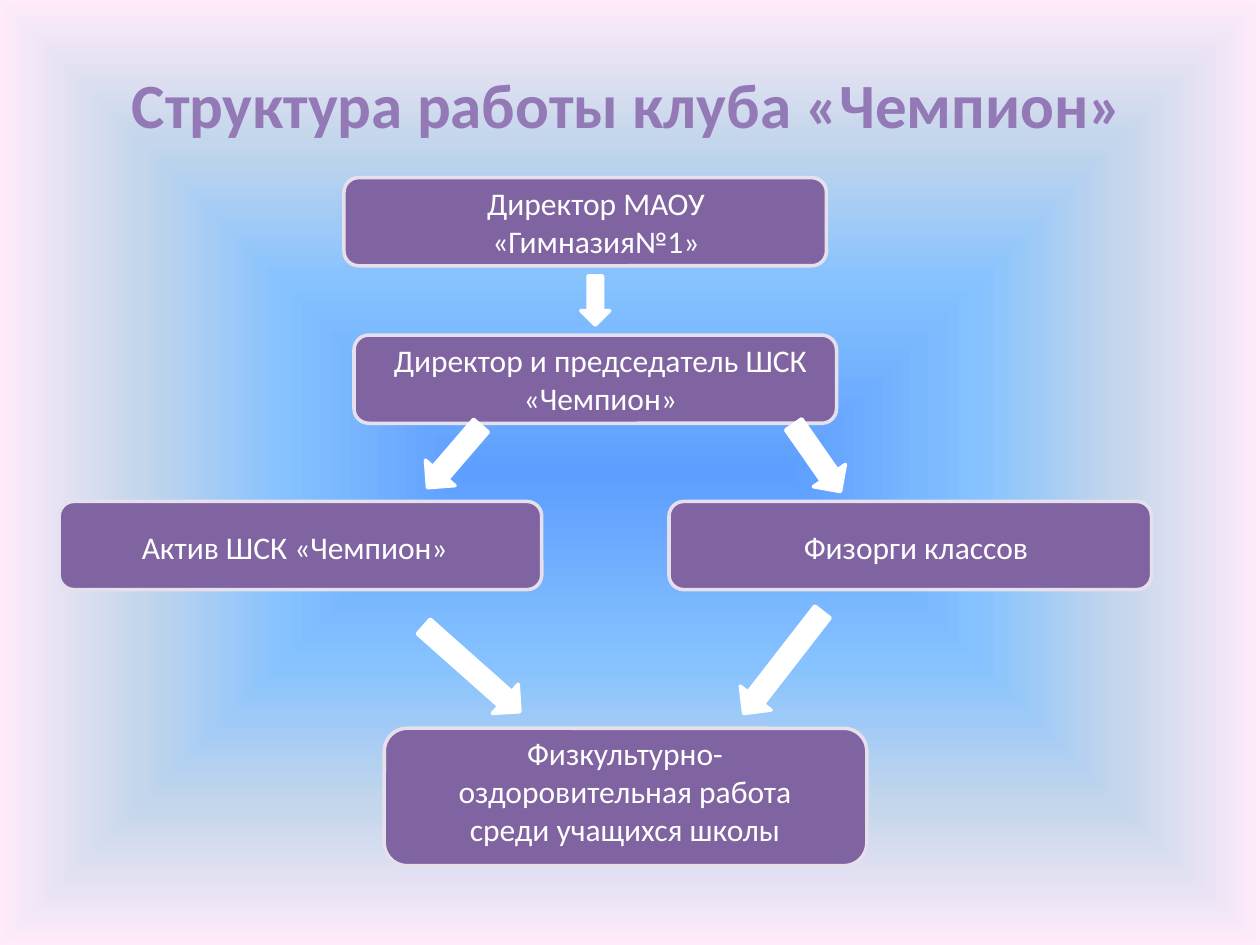
from pptx import Presentation
from pptx.dml.color import RGBColor
from pptx.enum.shapes import MSO_SHAPE
from pptx.enum.text import MSO_ANCHOR, PP_ALIGN
from pptx.oxml import parse_xml
from pptx.oxml.ns import nsdecls
from pptx.util import Inches, Pt

WHITE = RGBColor(0xFF, 0xFF, 0xFF)
PURPLE = RGBColor(0x80, 0x64, 0xA2)
LILAC = RGBColor(0xE6, 0xE0, 0xEC)
TITLE = RGBColor(0x93, 0x79, 0xB5)
BACKGROUND = [
    (0, RGBColor(0x5E, 0x9E, 0xFF)),
    (40, RGBColor(0x85, 0xC2, 0xFF)),
    (70, RGBColor(0xC4, 0xD6, 0xEB)),
    (100, RGBColor(0xFF, 0xEB, 0xFA)),
]
BOX_W = 3.83
BOXES = [
    (2.73, 1.41, 0.7),
    (3.05, 5.78, 1.09),
    (2.81, 2.66, 0.7),
    (0.47, 3.98, 0.7),
    (5.31, 3.98, 0.7),
]
LABELS = [
    ("Директор МАОУ «Гимназия№1»", 2.97, 1.41, 3.52, 0.71),
    ("Директор и председатель ШСК «Чемпион»", 2.97, 2.66, 3.59, 0.71),
    ("Актив ШСК «Чемпион»", 0.62, 4.14, 3.44, 0.4),
    ("Физорги классов", 5.55, 4.14, 3.44, 0.4),
    ("Физкультурно- оздоровительная работа среди учащихся школы",
     3.2, 5.78, 3.52, 1.01),
]
ARROWS = [
    (4.61, 2.19, 0.23, 0.39, 0),
    (3.45, 3.3, 0.31, 0.65, 40.7),
    (6.33, 3.31, 0.31, 0.65, 325.1),
    (3.59, 4.8, 0.31, 1.02, 311.6),
    (6.06, 4.75, 0.31, 1.02, 37.8),
]


def set_background(s):
    """Fill the slide with a gradient that spreads from its centre."""
    s.background.fill.solid()
    bg = s.element.xpath("./p:cSld/p:bg/p:bgPr")[0]
    stops = "".join(
        f'<a:gs pos="{pos * 1000}"><a:srgbClr val="{color}"/></a:gs>'
        for pos, color in BACKGROUND
    )
    bg.replace(bg[0], parse_xml(
        f'<a:gradFill {nsdecls("a")} rotWithShape="1"><a:gsLst>{stops}</a:gsLst>'
        '<a:path path="shape"><a:fillToRect l="50000" t="50000" r="50000" b="50000"/>'
        '</a:path></a:gradFill>'
    ))


def write(tf, text, size, color, bold=False):
    """Put one centred run of text into a frame."""
    p = tf.paragraphs[0]
    p.alignment = PP_ALIGN.CENTER
    r = p.add_run()
    r.text = text
    r.font.name = "Calibri"
    r.font.size = Pt(size)
    r.font.bold = bold
    r.font.color.rgb = color


def set_title(s, text):
    """Place and format the slide title."""
    sp = s.shapes.title
    sp.left, sp.top = Inches(0.91), Inches(0.47)
    sp.width, sp.height = Inches(8.14), Inches(0.71)
    tf = sp.text_frame
    tf.word_wrap = False
    tf.vertical_anchor = MSO_ANCHOR.TOP
    write(tf, text, 36, TITLE, bold=True)


def add_block(s, kind, x, y, w, h, fill, line, angle=0):
    """Add a filled and outlined preset shape."""
    sp = s.shapes.add_shape(kind, Inches(x), Inches(y), Inches(w), Inches(h))
    sp.rotation = angle
    sp.shadow.inherit = False
    sp.fill.solid()
    sp.fill.fore_color.rgb = fill
    sp.line.color.rgb = line
    sp.line.width = Pt(2)


def add_label(s, text, x, y, w, h):
    """Add a wrapped white caption."""
    sp = s.shapes.add_textbox(Inches(x), Inches(y), Inches(w), Inches(h))
    sp.text_frame.word_wrap = True
    write(sp.text_frame, text, 18, WHITE)


def main():
    """Build the club structure slide."""
    prs = Presentation()
    prs.slide_width, prs.slide_height = Inches(10), Inches(7.5)
    s = prs.slides.add_slide(prs.slide_layouts[5])
    set_background(s)
    set_title(s, "Структура работы клуба «Чемпион»")
    for x, y, h in BOXES:
        add_block(s, MSO_SHAPE.ROUNDED_RECTANGLE, x, y, BOX_W, h, PURPLE, LILAC)
    for label in LABELS:
        add_label(s, *label)
    for x, y, w, h, angle in ARROWS:
        add_block(s, MSO_SHAPE.DOWN_ARROW, x, y, w, h, WHITE, WHITE, angle)
    prs.save("out.pptx")


if __name__ == "__main__":
    main()
